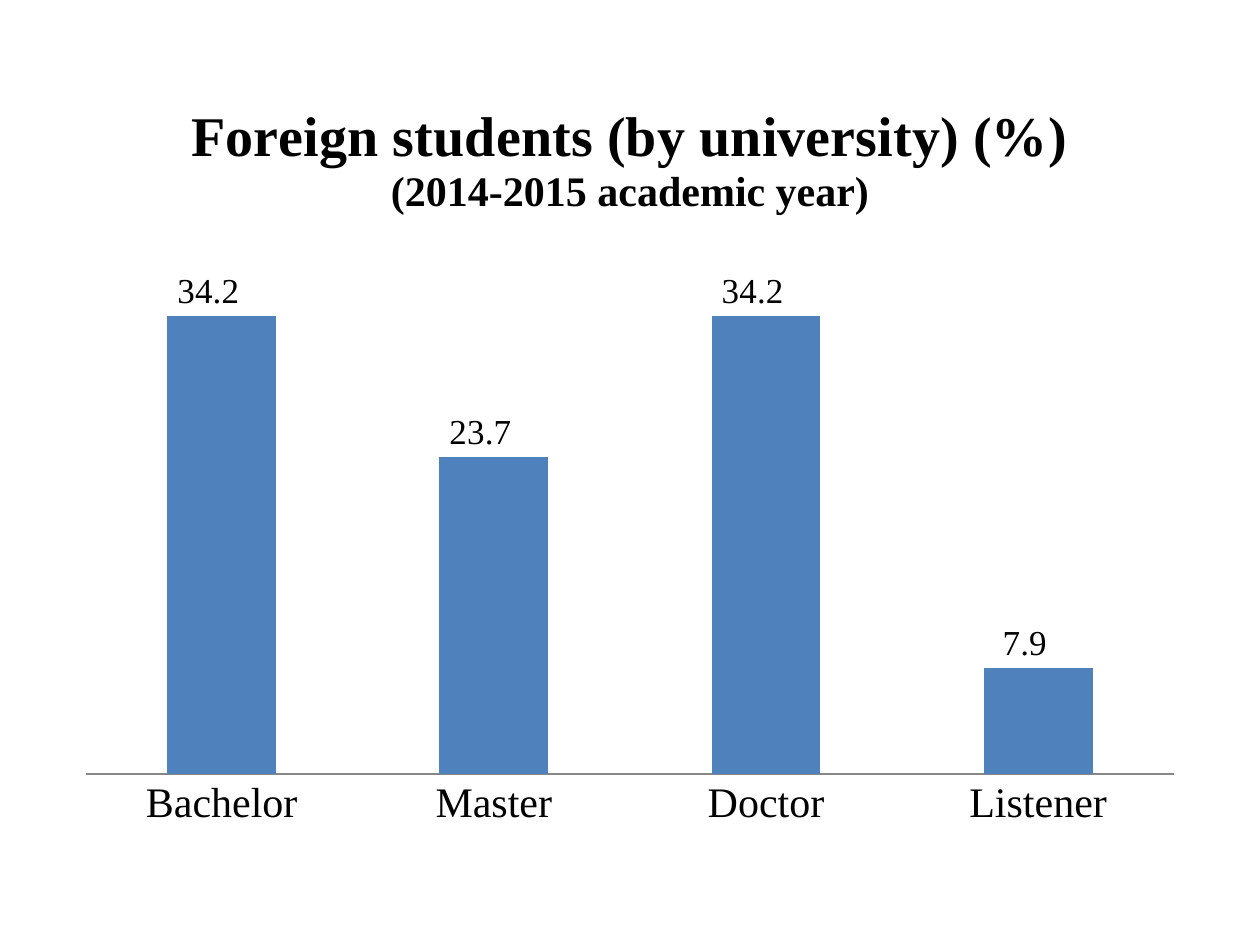
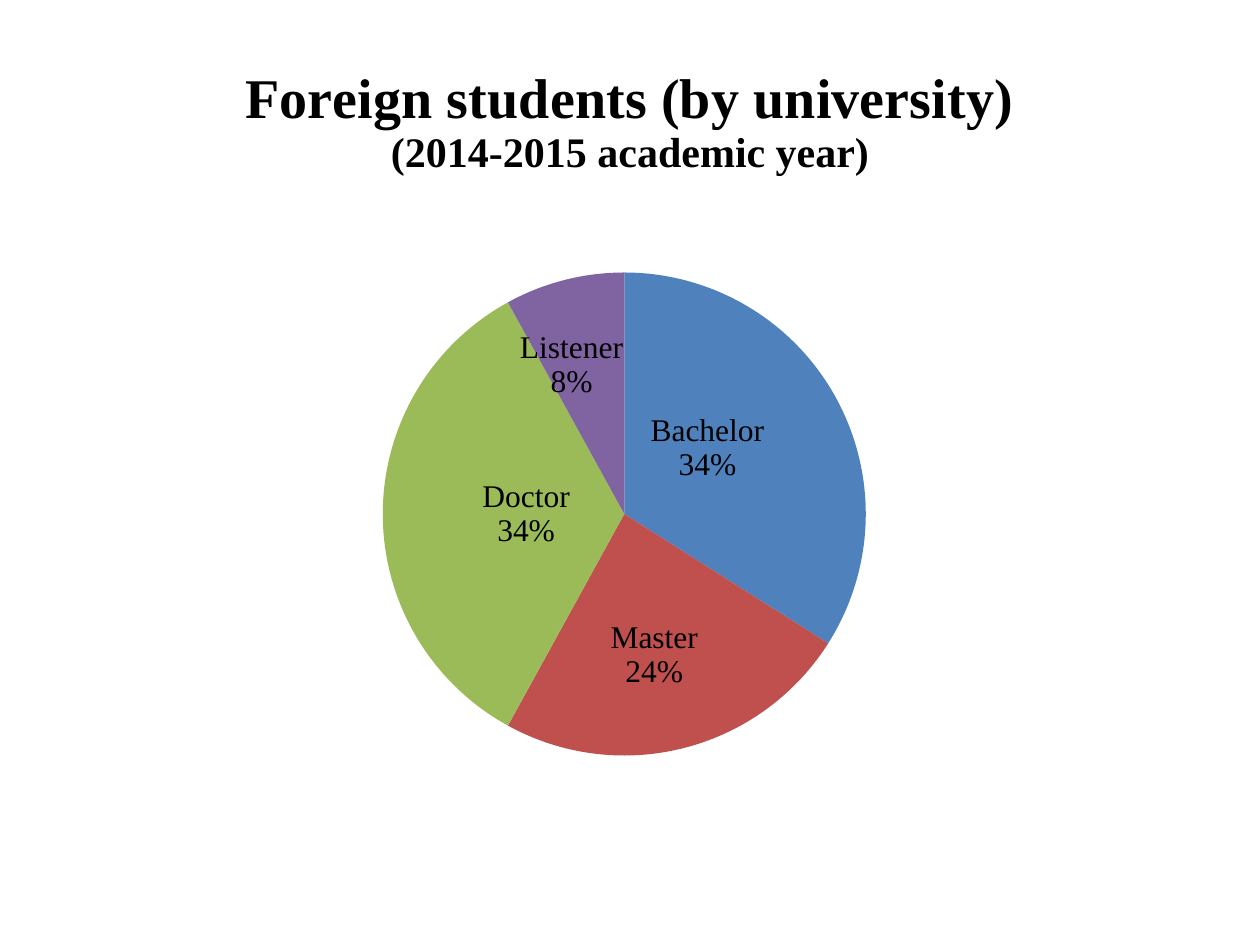
from dataclasses import dataclass

from lxml import etree
from pptx import Presentation
from pptx.chart.chart import Chart
from pptx.chart.data import CategoryChartData
from pptx.dml.color import RGBColor
from pptx.enum import chart as kinds
from pptx.oxml import ns
from pptx.util import Inches, Pt

BLACK = RGBColor(0x00, 0x00, 0x00)
GREY = RGBColor(0x86, 0x86, 0x86)
BLUE = RGBColor(0x4F, 0x81, 0xBD)
RED = RGBColor(0xC0, 0x50, 0x4D)
GREEN = RGBColor(0x9B, 0xBB, 0x59)
PURPLE = RGBColor(0x80, 0x64, 0xA2)

SERIF = "Times New Roman"
NUMBER = r"_-* #,##0.0_р_._-;\-* #,##0.0_р_._-;_-* "
YEAR = "(2014-2015 academic year)"
LEVELS = ("Bachelor", "Master", "Doctor", "Listener")
SHARES = (34.2, 23.7, 34.2, 7.9)


@dataclass(frozen=True)
class Plot:
    kind: kinds.XL_CHART_TYPE
    title: str
    top: float
    height: float
    values: tuple
    area: dict


@dataclass(frozen=True)
class Slice:
    color: RGBColor
    x: float
    y: float


BARS = Plot(kinds.XL_CHART_TYPE.COLUMN_CLUSTERED,
            "Foreign students (by university) (%)", 0.62, 6.07, SHARES,
            dict(layoutTarget="inner", xMode="edge", yMode="edge",
                 x=0.02, y=0.21, w=0.96, h=0.7))
PIE = Plot(kinds.XL_CHART_TYPE.PIE,
           "Foreign students (by university)", 0.31, 6.39,
           tuple(round(share) for share in SHARES),
           dict(layoutTarget="inner", xMode="edge", yMode="edge",
                x=0.28, y=0.29, w=0.43, h=0.6))
SLICES = (Slice(BLUE, -0.02, -0.01), Slice(RED, 0, 0.03),
          Slice(GREEN, 0.02, 0), Slice(PURPLE, -0.02, -0.04))


def style(font, size: float, bold: bool = False) -> None:
    font.name = SERIF
    font.size = Pt(size)
    font.bold = bold
    font.color.rgb = BLACK


def paint(fill, color: RGBColor) -> None:
    fill.solid()
    fill.fore_color.rgb = color


def layout(parts: dict) -> etree.ElementBase:
    node = etree.Element(ns.qn("c:layout"))
    box = etree.SubElement(node, ns.qn("c:manualLayout"))
    for name, value in parts.items():
        etree.SubElement(box, ns.qn(f"c:{name}")).set("val", str(value))
    return node


def add_plot(deck, plot: Plot) -> Chart:
    slide = deck.slides.add_slide(deck.slide_layouts[6])
    data = CategoryChartData(number_format=NUMBER)
    data.categories = LEVELS
    data.add_series("Series 1", plot.values)
    chart = slide.shapes.add_chart(
        plot.kind, Inches(0.5), Inches(plot.top), Inches(9),
        Inches(plot.height), data).chart
    chart.font.name = "Calibri"
    chart.font.size = Pt(10)
    chart.font.color.rgb = BLACK
    chart.has_legend = False

    frame = chart.chart_title.text_frame
    chart.chart_title.include_in_layout = False
    frame.text = plot.title
    style(frame.paragraphs[0].font, 32, True)
    line = frame.add_paragraph()
    line.text = YEAR
    style(line.font, 24, True)

    area = chart.element.find(".//" + ns.qn("c:plotArea"))
    for old in area.findall(ns.qn("c:layout")):
        area.remove(old)
    area.insert(0, layout(plot.area))
    return chart


def draw_bars(deck) -> None:
    chart = add_plot(deck, BARS)
    bars = chart.plots[0]
    bars.gap_width = 150
    bars.overlap = -25
    bars.vary_by_categories = False
    paint(bars.series[0].format.fill, BLUE)

    bars.has_data_labels = True
    labels = bars.data_labels
    labels.show_value = True
    labels.number_format = NUMBER
    labels.number_format_is_linked = False
    labels.position = kinds.XL_LABEL_POSITION.OUTSIDE_END
    style(labels.font, 20)

    scale = chart.value_axis
    scale.minimum_scale = 0
    scale.maximum_scale = 40
    scale.has_major_gridlines = False
    scale.visible = False
    axis = chart.category_axis
    axis.major_tick_mark = kinds.XL_TICK_MARK.NONE
    axis.format.line.color.rgb = GREY
    axis.format.line.width = Pt(0.75)
    style(axis.tick_labels.font, 24)


def draw_pie(deck) -> None:
    pie = add_plot(deck, PIE).plots[0]
    pie.vary_by_categories = True
    series = pie.series[0]
    shown = {"showVal": "0", "showCatName": "1", "showPercent": "1"}
    for index, part in enumerate(SLICES):
        point = series.points[index]
        paint(point.format.fill, part.color)
        label = point.data_label
        style(label.font, 18)
        label.position = kinds.XL_LABEL_POSITION.CENTER
    for node, part in zip(series.data_labels._element.findall(ns.qn("c:dLbl")),
                          SLICES):
        for name, value in shown.items():
            node.find(ns.qn(f"c:{name}")).set("val", value)
        node.insert(1, layout(dict(x=part.x, y=part.y)))
        form = etree.Element(ns.qn("c:numFmt"))
        form.set("formatCode", "0%")
        form.set("sourceLinked", "0")
        node.insert(2, form)
        mark = etree.SubElement(node, ns.qn("c:separator"))
        mark.text = "\n"


def main() -> None:
    deck = Presentation()
    deck.slide_width = Inches(10)
    deck.slide_height = Inches(7.5)
    draw_bars(deck)
    draw_pie(deck)
    deck.save("out.pptx")


if __name__ == "__main__":
    main()
